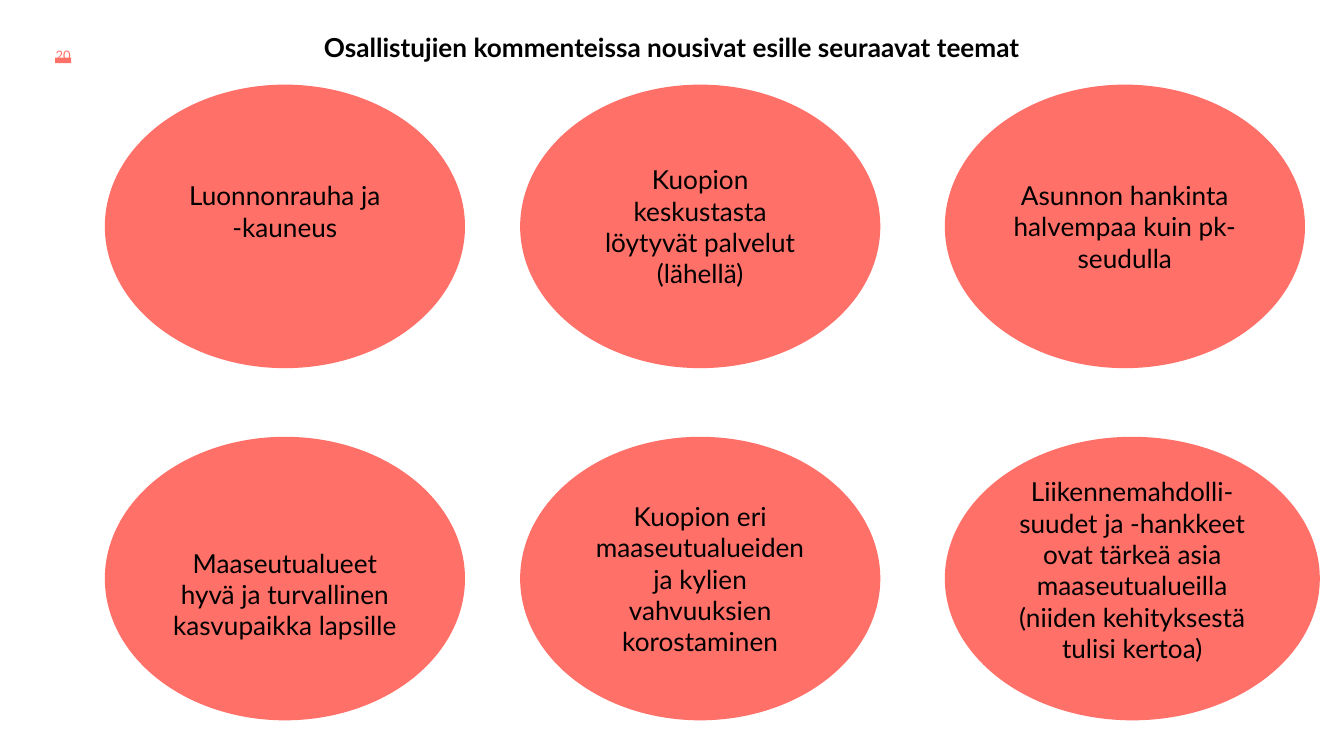
from pptx import Presentation
from pptx.dml.color import RGBColor
from pptx.enum.shapes import MSO_SHAPE
from pptx.enum.text import MSO_ANCHOR, MSO_AUTO_SIZE, PP_ALIGN
from pptx.util import Inches, Pt

CORAL = "FF7068"
BLACK = "000000"


def paint(target, color):
    target.solid()
    target.fore_color.rgb = RGBColor.from_string(color)


def write(shape, text, size, color, anchor, pads, bold=False):
    frame = shape.text_frame
    frame.text = text
    frame.word_wrap = True
    frame.auto_size = MSO_AUTO_SIZE.NONE
    frame.vertical_anchor = anchor
    frame.margin_left = frame.margin_right = Inches(pads[0])
    frame.margin_top, frame.margin_bottom = Inches(pads[1]), Inches(pads[2])
    for para in frame.paragraphs:
        para.alignment = PP_ALIGN.CENTER
        para.font.name = "Lato"
        para.font.size = Pt(size)
        para.font.bold = bold
        paint(para.font.fill, color)


deck = Presentation()
deck.slide_width = Inches(10)
deck.slide_height = Inches(10) * 9 // 16
slide = deck.slides.add_slide(deck.slide_layouts[5])
shapes = slide.shapes
paint(slide.background.fill, "FFFFFF")

title = shapes.title
title.left, title.top = Inches(2.07), Inches(0.13)
title.width, title.height = Inches(5.86), Inches(0.37)
write(title, "Osallistujien kommenteissa nousivat esille seuraavat teemat",
      14, BLACK, MSO_ANCHOR.TOP, (0.1, 0.1, 0.1), bold=True)

page = shapes.add_shape(MSO_SHAPE.RECTANGLE, Inches(0.41), Inches(0.43),
                        Inches(0.12), Inches(0.04))
page.shadow.inherit = False
paint(page.fill, CORAL)
page.line.fill.background()
write(page, "20", 7, CORAL, MSO_ANCHOR.BOTTOM, (0, 0, 0))
page.text_frame.paragraphs[0].line_spacing = 1.7

lefts = [0.78, 3.87, 7.03]
tops = [0.63, 3.25]
themes = [
    ("Luonnonrauha ja -kauneus", 2.68, 0.1, 0.33),
    ("Kuopion keskustasta löytyvät palvelut (lähellä)", 2.68, 0.1, 0.1),
    ("Asunnon hankinta halvempaa kuin pk-seudulla", 2.68, 0.1, 0.1),
    ("Maaseutualueet hyvä ja turvallinen kasvupaikka lapsille", 2.68, 0.33, 0.1),
    ("Kuopion eri maaseutualueiden ja kylien vahvuuksien korostaminen",
     2.68, 0.1, 0.1),
    ("Liikennemahdolli-\nsuudet ja -hankkeet ovat tärkeä asia maaseutualueilla "
     "(niiden kehityksestä tulisi kertoa)", 2.79, 0, 0.13),
]
for i, (text, width, above, below) in enumerate(themes):
    row, col = divmod(i, 3)
    oval = shapes.add_shape(MSO_SHAPE.OVAL, Inches(lefts[col]), Inches(tops[row]),
                            Inches(width), Inches(2.11))
    oval.shadow.inherit = False
    paint(oval.fill, CORAL)
    oval.line.fill.background()
    write(oval, text, 14, BLACK, MSO_ANCHOR.MIDDLE, (0.1, above, below))

deck.save("out.pptx")
